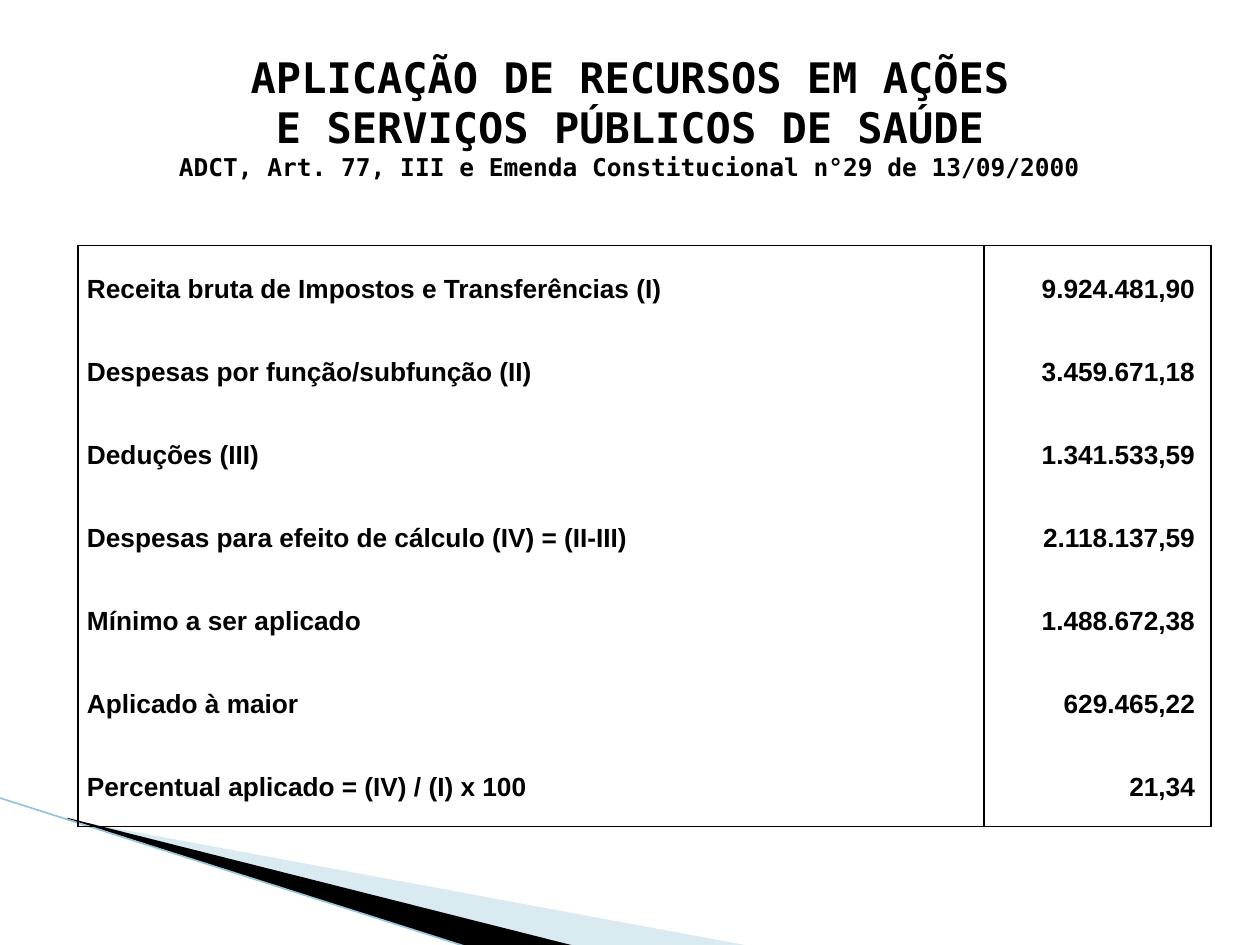
import pptx
import pptx.util
import pptx.dml.color
import pptx.enum.shapes
import pptx.enum.text
import pptx.oxml
import pptx.oxml.ns

Pt = pptx.util.Pt
RGB = pptx.dml.color.RGBColor
qn = pptx.oxml.ns.qn
ALIGN = pptx.enum.text.PP_ALIGN
MIDDLE = pptx.enum.text.MSO_ANCHOR.MIDDLE

BLACK = RGB(0x00, 0x00, 0x00)
PALE_BLUE = RGB(0xA0, 0xCB, 0xDC)
LINE_BLUE = RGB(0x97, 0xC5, 0xD8)

# Content
TITLE = [
    ("APLICAÇÃO DE RECURSOS EM AÇÕES", 24),
    ("E SERVIÇOS PÚBLICOS DE SAÚDE", 24),
    ("ADCT, Art. 77, III e Emenda Constitucional n°29 de 13/09/2000", 14),
]
ROWS = [
    ("Receita bruta de Impostos e Transferências (I)", "9.924.481,90"),
    ("Despesas por função/subfunção (II)", "3.459.671,18"),
    ("Deduções (III)", "1.341.533,59"),
    ("Despesas para efeito de cálculo (IV) = (II-III)", "2.118.137,59"),
    ("Mínimo a ser aplicado", "1.488.672,38"),
    ("Aplicado à maior", "629.465,22"),
    ("Percentual aplicado = (IV) / (I) x 100", "21,34"),
]
# Corner wedges: points, fill, opacity in percent
WEDGES = [
    ([(39.6, 468.5), (428.4, 540.5), (328.3, 540.5), (39.6, 468)], PALE_BLUE, 40),
    ([(38.2, 467.3), (329, 540.7), (267.8, 541.4), (38.9, 468)], BLACK, 100),
]
COLS = [(517.7, ALIGN.LEFT, 5), (129.6, ALIGN.RIGHT, 9.2)]  # width, align, right inset
TABLE_LEFT, TABLE_TOP, ROW_H = 44.7, 140.4, 47.4


def add_wedge(s, points, color, opacity):
    pts = [(Pt(x), Pt(y)) for x, y in points]
    fb = s.shapes.build_freeform(*pts[0], scale=1.0)
    fb.add_line_segments(pts[1:], close=True)
    sp = fb.convert_to_shape()
    sp.shadow.inherit = False
    sp.line.fill.background()
    sp.fill.solid()
    sp.fill.fore_color.rgb = color
    if opacity < 100:
        clr = sp.fill._xPr.find(".//" + qn("a:srgbClr"))
        pptx.oxml.xmlchemy.OxmlElement("a:alpha")
        alpha = clr.makeelement(qn("a:alpha"), {"val": str(opacity * 1000)})
        clr.append(alpha)


def set_borders(cell, shown):
    tc_pr = cell._tc.get_or_add_tcPr()
    for i, side in enumerate("LRTB"):
        ln = tc_pr.makeelement(qn("a:ln" + side), {"w": str(Pt(1))})
        if side in shown:
            fill = ln.makeelement(qn("a:solidFill"), {})
            fill.append(fill.makeelement(qn("a:srgbClr"), {"val": str(BLACK)}))
        else:
            fill = ln.makeelement(qn("a:noFill"), {})
        ln.append(fill)
        tc_pr.insert(i, ln)


def set_font(font, name, size):
    font.name = name
    font.size = Pt(size)
    font.bold = True
    font.color.rgb = BLACK


prs = pptx.Presentation()
prs.slide_width, prs.slide_height = Pt(720), Pt(540)
s = prs.slides.add_slide(prs.slide_layouts[5])

# Corner decoration
for wedge in WEDGES:
    add_wedge(s, *wedge)
edge = s.shapes.add_connector(pptx.enum.shapes.MSO_CONNECTOR.STRAIGHT,
                              Pt(-0.7), Pt(455.8), Pt(267.8), Pt(541.4))
edge.line.color.rgb = LINE_BLUE
edge.line.width = Pt(0.95)
sp_pr = edge._element.spPr
sp_pr.append(sp_pr.makeelement(qn("a:effectLst"), {}))

# Title
title = s.shapes.title
title.left, title.top, title.width, title.height = Pt(36), Pt(21.6), Pt(648), Pt(90)
tf = title.text_frame
tf.word_wrap = True
tf.auto_size = pptx.enum.text.MSO_AUTO_SIZE.NONE
tf.vertical_anchor = MIDDLE
p = tf.paragraphs[0]
p.alignment = ALIGN.CENTER
for i, (text, size) in enumerate(TITLE):
    if i:
        p.add_line_break()
        br = p._p.findall(qn("a:br"))[-1]
        br.append(br.makeelement(qn("a:rPr"), {"sz": str(TITLE[i - 1][1] * 100)}))
    r = p.add_run()
    r.text = text
    set_font(r.font, "DejaVu Sans Mono", size)

# Table
frame = s.shapes.add_table(len(ROWS), len(COLS), Pt(TABLE_LEFT), Pt(TABLE_TOP),
                           Pt(sum(c[0] for c in COLS)), Pt(ROW_H * len(ROWS)))
table = frame.table
table.first_row = table.horz_banding = False
for col, (width, _, _) in zip(table.columns, COLS):
    col.width = Pt(width)
for i, row in enumerate(ROWS):
    table.rows[i].height = Pt(ROW_H)
    shown = "LR" + ("T" if i == 0 else "") + ("B" if i == len(ROWS) - 1 else "")
    for j, (text, (_, align, inset)) in enumerate(zip(row, COLS)):
        cell = table.cell(i, j)
        cell.fill.background()
        set_borders(cell, shown)
        cell.vertical_anchor = MIDDLE
        cell.margin_left, cell.margin_right = Pt(5), Pt(inset)
        cell.margin_top = cell.margin_bottom = Pt(0.7)
        p = cell.text_frame.paragraphs[0]
        p.text = text
        p.alignment = align
        p.line_spacing = 1.15
        set_font(p.font, "Arial", 15)

prs.save("out.pptx")
